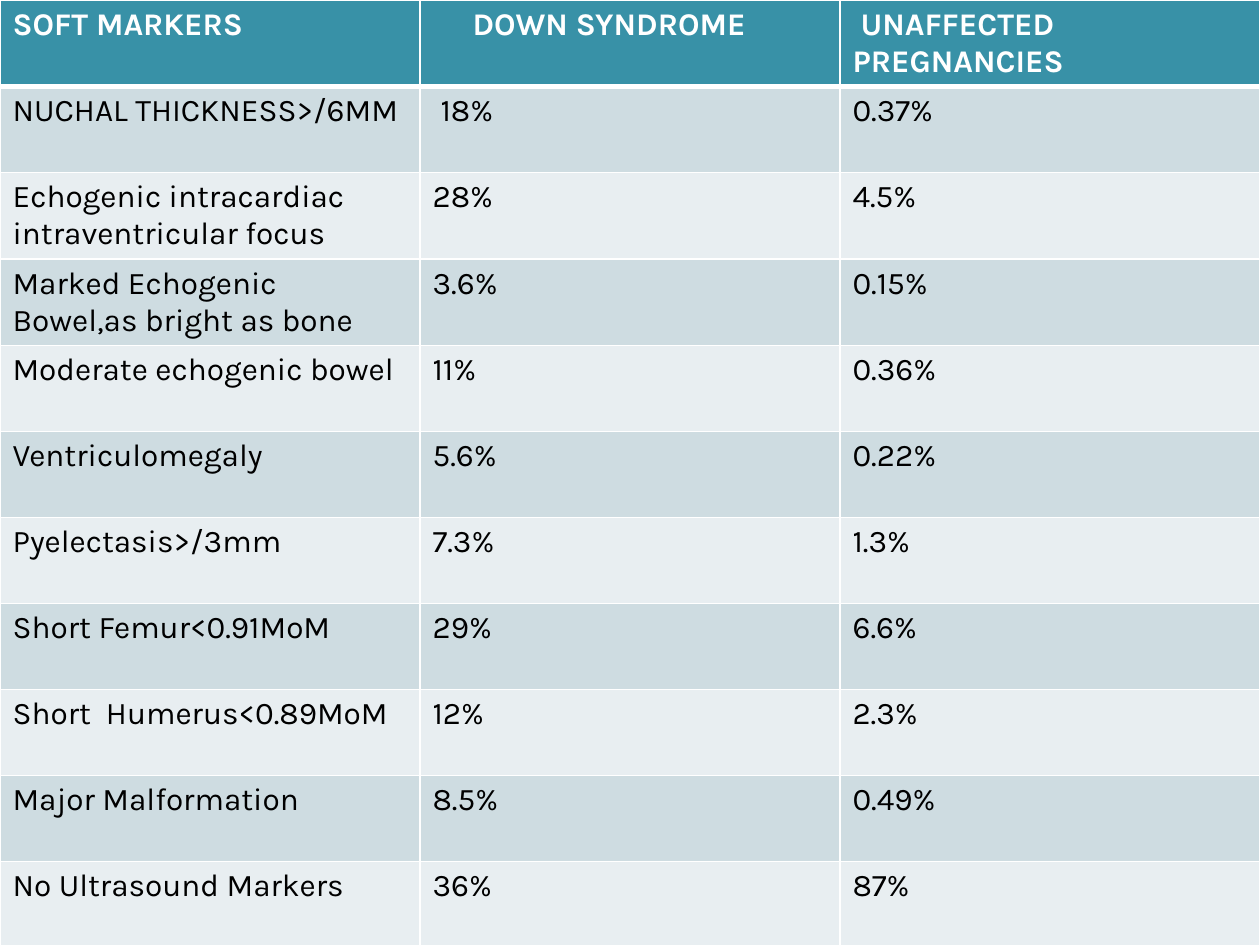
from lxml import etree
from pptx import Presentation
from pptx import util as u
from pptx.dml.color import RGBColor
from pptx.oxml import ns

PX = 914400 / 126
WHITE = RGBColor(0xFF, 0xFF, 0xFF)
BLACK = RGBColor(0x00, 0x00, 0x00)
TEAL = RGBColor(0x38, 0x91, 0xA7)
BAND_DARK = RGBColor(0xCE, 0xDC, 0xE1)
BAND_LIGHT = RGBColor(0xE8, 0xEE, 0xF1)

COLUMN_WIDTH = 420
ROW_HEIGHT = 86
ROWS = [
    ("SOFT MARKERS", "DOWN SYNDROME", "UNAFFECTED PREGNANCIES"),
    ("NUCHAL THICKNESS>/6MM", "18%", "0.37%"),
    ("Echogenic intracardiac intraventricular focus", "28%", "4.5%"),
    ("Marked Echogenic Bowel,as bright as bone", "3.6%", "0.15%"),
    ("Moderate echogenic bowel", "11%", "0.36%"),
    ("Ventriculomegaly", "5.6%", "0.22%"),
    ("Pyelectasis>/3mm", "7.3%", "1.3%"),
    ("Short Femur<0.91MoM", "29%", "6.6%"),
    ("Short  Humerus<0.89MoM", "12%", "2.3%"),
    ("Major Malformation", "8.5%", "0.49%"),
    ("No Ultrasound Markers", "36%", "87%"),
]
# First-line indents in px, by (row, column)
INDENTS = {(0, 1): 40, (0, 2): 8, (1, 1): 8}


def px(count):
    return u.Emu(round(count * PX))


def set_borders(cell, top, bottom):
    """Draw white cell borders; top and bottom are widths in points."""
    props = cell._tc.get_or_add_tcPr()
    for place, (side, width) in enumerate(
        [("lnL", 1), ("lnR", 1), ("lnT", top), ("lnB", bottom)]
    ):
        line = etree.Element(ns.qn("a:" + side), w=str(u.Pt(width)))
        fill = etree.SubElement(line, ns.qn("a:solidFill"))
        etree.SubElement(fill, ns.qn("a:srgbClr"), val=str(WHITE))
        props.insert(place, line)


deck = Presentation()
deck.slide_width, deck.slide_height = px(1260), px(945)
page = deck.slides.add_slide(deck.slide_layouts[6])

table = page.shapes.add_table(
    len(ROWS), 3, 0, 0, px(3 * COLUMN_WIDTH), px(len(ROWS) * ROW_HEIGHT)
).table
for column in table.columns:
    column.width = px(COLUMN_WIDTH)
for row in table.rows:
    row.height = px(ROW_HEIGHT)

for r, values in enumerate(ROWS):
    header = r == 0
    for c, value in enumerate(values):
        cell = table.cell(r, c)
        cell.fill.solid()
        cell.fill.fore_color.rgb = TEAL if header else BAND_DARK if r % 2 else BAND_LIGHT
        set_borders(cell, top=3 if r == 1 else 1, bottom=3 if header else 1)

        para = cell.text_frame.paragraphs[0]
        if (r, c) in INDENTS:
            para_props = para._p.get_or_add_pPr()
            para_props.set("marL", "0")
            para_props.set("indent", str(px(INDENTS[r, c])))
        span = para.add_run()
        span.text = value
        span.font.name = "Karla"
        span.font.size = u.Pt(18)
        span.font.bold = header
        span.font.color.rgb = WHITE if header else BLACK

deck.save("out.pptx")
